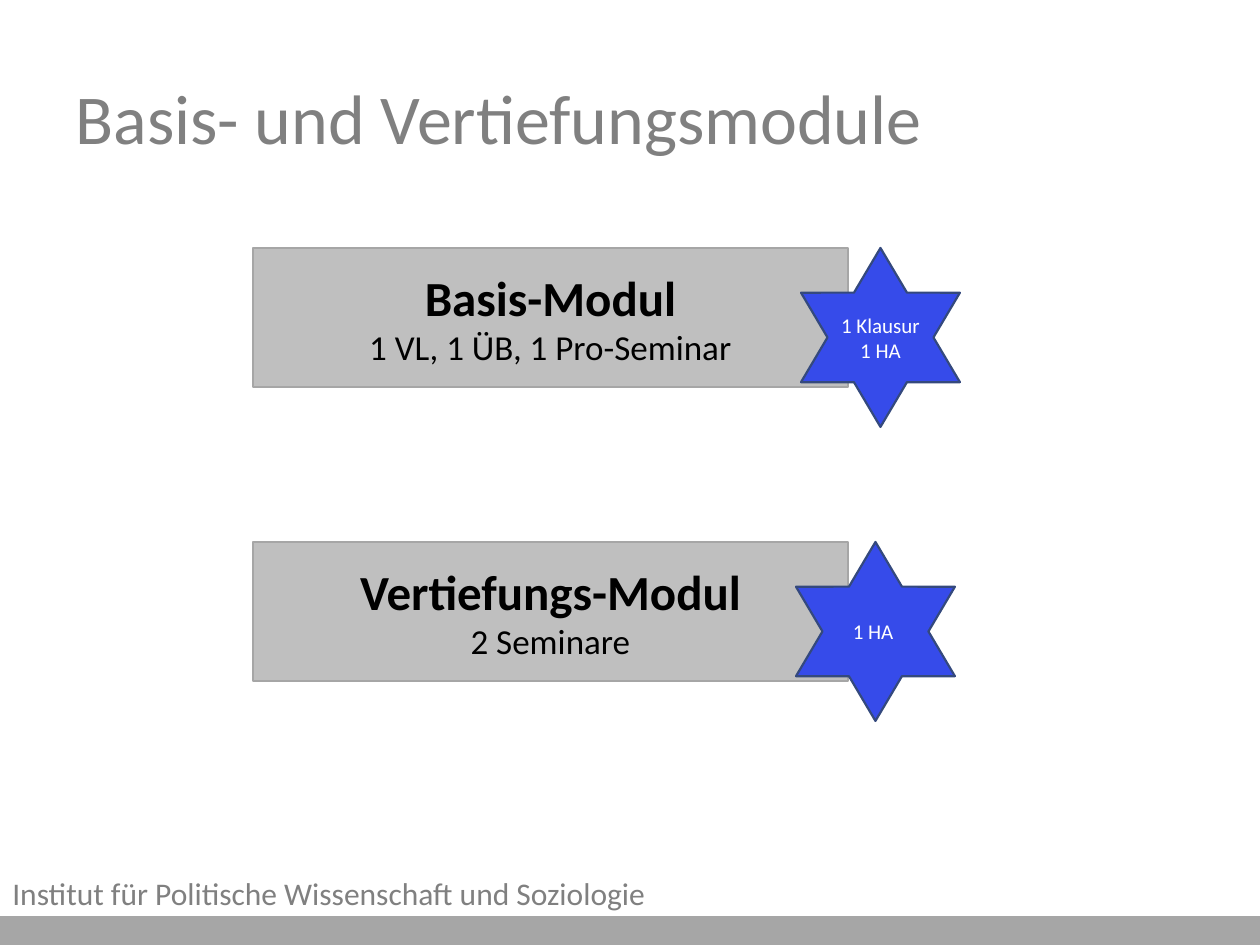
from dataclasses import dataclass

from pptx import Presentation
from pptx.dml.color import RGBColor
from pptx.enum.shapes import MSO_SHAPE
from pptx.enum.text import MSO_ANCHOR, PP_ALIGN
from pptx.shapes.autoshape import Shape
from pptx.slide import Slide
from pptx.text.text import TextFrame
from pptx.util import Emu, Pt

RECTANGLE = MSO_SHAPE.RECTANGLE
STAR = MSO_SHAPE.STAR_6_POINT
MIDDLE = MSO_ANCHOR.MIDDLE
LEFT, CENTER = PP_ALIGN.LEFT, PP_ALIGN.CENTER

PX_PER_INCH = 126
EMU_PER_PX = 914400 / PX_PER_INCH
FONT = "Calibri"
TITLE_ONLY = 5

BLACK = RGBColor(0x00, 0x00, 0x00)
WHITE = RGBColor(0xFF, 0xFF, 0xFF)
TEXT_GRAY = RGBColor(0x80, 0x80, 0x80)
BAR_GRAY = RGBColor(0xA6, 0xA6, 0xA6)
BOX_GRAY = RGBColor(0xBF, 0xBF, 0xBF)
STAR_BLUE = RGBColor(0x36, 0x4B, 0xEA)
STAR_EDGE = RGBColor(0x34, 0x49, 0x7D)


@dataclass(frozen=True)
class Line:
    text: str
    size: int
    color: RGBColor
    bold: bool = False


@dataclass(frozen=True)
class Module:
    name: str
    courses: str
    exams: tuple[str, ...]
    top: int
    star_left: int


MODULES = (
    Module("Basis-Modul", "1 VL, 1 ÜB, 1 Pro-Seminar", ("1 Klausur", "1 HA"), 248, 801),
    Module("Vertiefungs-Modul", "2 Seminare", ("1 HA ",), 542, 796),
)


def px(length: int) -> Emu:
    return Emu(round(length * EMU_PER_PX))


def write_lines(frame: TextFrame, lines: list[Line], alignment: PP_ALIGN) -> None:
    frame.word_wrap = True
    for index, line in enumerate(lines):
        paragraph = frame.paragraphs[0] if index == 0 else frame.add_paragraph()
        paragraph.alignment = alignment
        run = paragraph.add_run()
        run.text = line.text
        run.font.name = FONT
        run.font.size = Pt(line.size)
        run.font.bold = line.bold
        run.font.color.rgb = line.color


def add_filled_shape(slide: Slide, kind: MSO_SHAPE, left: int, top: int, width: int,
                     height: int, fill: RGBColor, edge: RGBColor,
                     edge_width: float) -> Shape:
    shape = slide.shapes.add_shape(kind, px(left), px(top), px(width), px(height))
    shape.shadow.inherit = False
    shape.fill.solid()
    shape.fill.fore_color.rgb = fill
    shape.line.color.rgb = edge
    shape.line.width = Pt(edge_width)
    shape.text_frame.vertical_anchor = MIDDLE
    return shape


def add_title(slide: Slide, text: str) -> None:
    title = slide.shapes.title
    title.left, title.top, title.width, title.height = px(63), px(38), px(1134), px(157)
    title.text_frame.vertical_anchor = MIDDLE
    write_lines(title.text_frame, [Line(text, 40, TEXT_GRAY)], LEFT)


def add_footer(slide: Slide, text: str) -> None:
    add_filled_shape(slide, RECTANGLE, 0, 918, 1260, 27, BAR_GRAY, BAR_GRAY, 2)
    box = slide.shapes.add_textbox(px(0), px(868), px(893), px(50))
    write_lines(box.text_frame, [Line(text, 18, TEXT_GRAY)], LEFT)


def add_module(slide: Slide, module: Module) -> None:
    box = add_filled_shape(slide, RECTANGLE, 253, module.top, 595, 139,
                           BOX_GRAY, BAR_GRAY, 1.25)
    write_lines(box.text_frame, [Line(module.name, 28, BLACK, True),
                                 Line(module.courses, 20, BLACK)], CENTER)
    star = add_filled_shape(slide, STAR, module.star_left, module.top, 159, 179,
                            STAR_BLUE, STAR_EDGE, 1.25)
    star.text_frame.margin_left = star.text_frame.margin_right = 0
    write_lines(star.text_frame, [Line(exam, 12, WHITE) for exam in module.exams], CENTER)


def main() -> None:
    presentation = Presentation()
    presentation.slide_width, presentation.slide_height = px(1260), px(945)
    slide = presentation.slides.add_slide(presentation.slide_layouts[TITLE_ONLY])
    add_footer(slide, "Institut für Politische Wissenschaft und Soziologie")
    add_title(slide, "Basis- und Vertiefungsmodule")
    for module in MODULES:
        add_module(slide, module)
    presentation.save("out.pptx")


if __name__ == "__main__":
    main()
